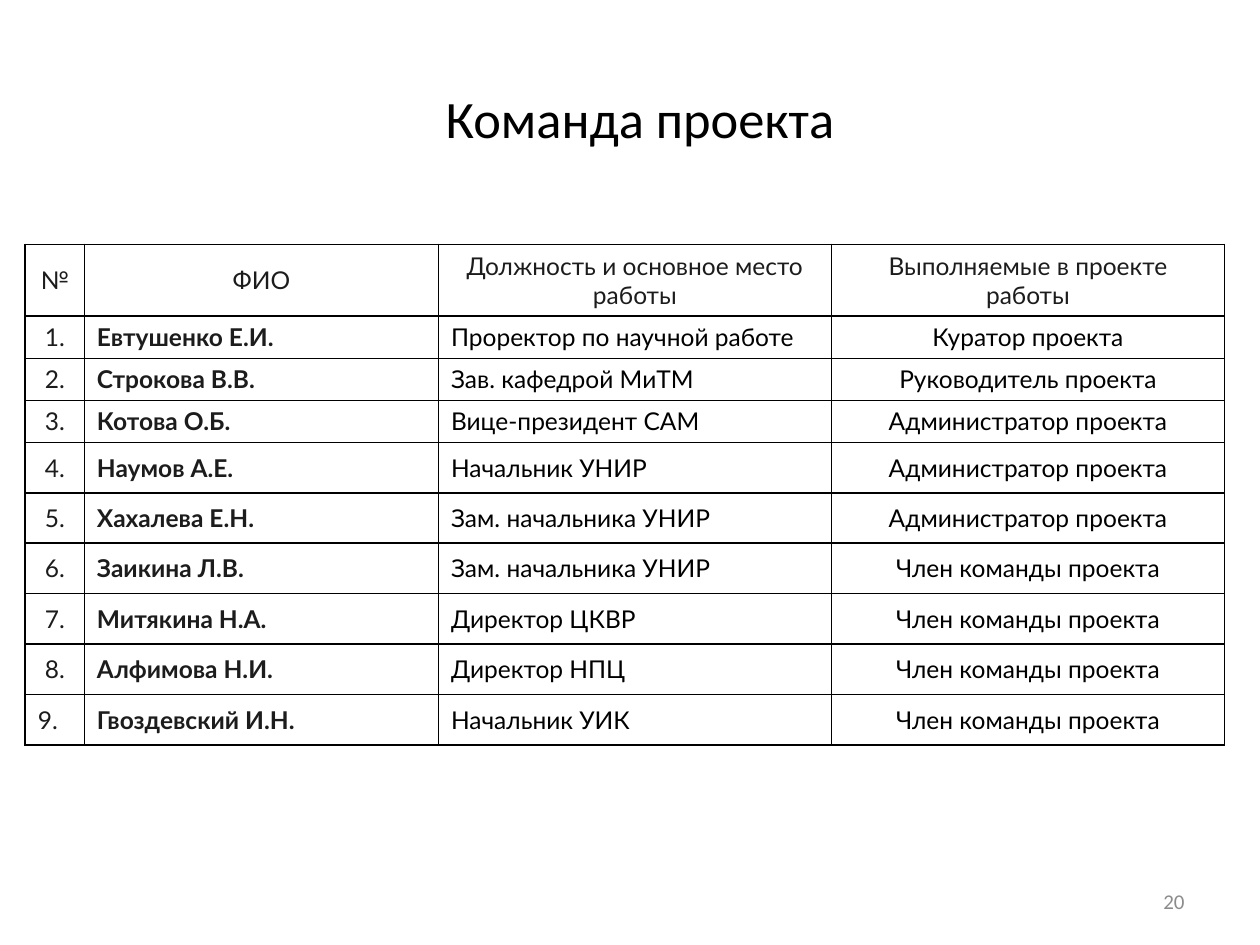
import pptx
import pptx.dml.color
import pptx.enum.text
import pptx.oxml
import pptx.oxml.ns
import pptx.util
from pptx.util import Inches

BLACK = pptx.dml.color.RGBColor(0x00, 0x00, 0x00)
CHARCOAL = pptx.dml.color.RGBColor(0x1C, 0x1C, 0x1C)
GREY = pptx.dml.color.RGBColor(0x8C, 0x8C, 0x8C)

LEFT = pptx.enum.text.PP_ALIGN.LEFT
CENTER = pptx.enum.text.PP_ALIGN.CENTER
RIGHT = pptx.enum.text.PP_ALIGN.RIGHT
MIDDLE = pptx.enum.text.MSO_ANCHOR.MIDDLE

COLUMN_WIDTHS = [0.47, 2.81, 3.12, 3.12]
ROW_HEIGHTS = [0.57] + [0.33] * 3 + [0.4] * 6
HEADERS = ["№", "ФИО", "Должность и основное место работы", "Выполняемые в проекте работы"]
TEAM = [
    ("Евтушенко Е.И.", "Проректор по научной работе", "Куратор проекта"),
    ("Строкова В.В.", "Зав. кафедрой МиТМ", "Руководитель проекта"),
    ("Котова О.Б.", "Вице-президент CAM", "Администратор проекта"),
    ("Наумов А.Е.", "Начальник УНИР", "Администратор проекта"),
    ("Хахалева Е.Н.", "Зам. начальника УНИР", "Администратор проекта"),
    ("Заикина Л.В.", "Зам. начальника УНИР", "Член команды проекта"),
    ("Митякина Н.А.", "Директор ЦКВР", "Член команды проекта"),
    ("Алфимова Н.И.", "Директор НПЦ", "Член команды проекта"),
    ("Гвоздевский И.Н.", "Начальник УИК", "Член команды проекта"),
]


def write_text(frame, text, size=14, font="Lato", color=BLACK, bold=False, align=LEFT):
    para = frame.paragraphs[0]
    para.alignment = align
    span = para.add_run()
    span.text = text
    span.font.size = pptx.util.Pt(size)
    span.font.name = font
    span.font.bold = bold
    span.font.color.rgb = color


def add_title(slide, text):
    title = slide.shapes.title
    title.left, title.top = Inches(0.33), Inches(0.47)
    title.width, title.height = Inches(9.5), Inches(0.92)
    title.text_frame.vertical_anchor = MIDDLE
    write_text(title.text_frame, text, size=30, font="Calibri", align=CENTER)


def add_page_number(slide, text):
    box = slide.shapes.add_textbox(Inches(7.17), Inches(6.95), Inches(2.33), Inches(0.4))
    box.text_frame.word_wrap = True
    box.text_frame.vertical_anchor = MIDDLE
    write_text(box.text_frame, text, size=12, font="Calibri", color=GREY, align=RIGHT)


def set_borders(cell):
    """Draw a thin black line on all four sides; the lines must precede the fill."""
    properties = cell._tc.get_or_add_tcPr()
    for index, side in enumerate(("lnL", "lnR", "lnT", "lnB")):
        line = pptx.oxml.parse_xml(
            f'<a:{side} {pptx.oxml.ns.nsdecls("a")} w="12700"><a:solidFill>'
            f'<a:srgbClr val="{BLACK}"/></a:solidFill></a:{side}>'
        )
        properties.insert(index, line)


def fill_cell(cell, text, **text_format):
    cell.fill.background()
    set_borders(cell)
    cell.vertical_anchor = MIDDLE
    cell.margin_left = cell.margin_right = Inches(0.1)
    cell.margin_top = cell.margin_bottom = Inches(0.05)
    write_text(cell.text_frame, text, **text_format)


def add_team_table(slide):
    frame = slide.shapes.add_table(
        len(ROW_HEIGHTS), len(COLUMN_WIDTHS), Inches(0.2), Inches(1.94),
        Inches(sum(COLUMN_WIDTHS)), Inches(sum(ROW_HEIGHTS)),
    )
    table = frame.table
    table.first_row = table.horz_banding = False
    for column, width in zip(table.columns, COLUMN_WIDTHS):
        column.width = Inches(width)
    for row, height in zip(table.rows, ROW_HEIGHTS):
        row.height = Inches(height)

    for column, header in enumerate(HEADERS):
        fill_cell(table.cell(0, column), header, color=CHARCOAL, align=CENTER)
    for number, (name, position, role) in enumerate(TEAM, start=1):
        number_align = LEFT if number == len(TEAM) else CENTER
        fill_cell(table.cell(number, 0), f"{number}.", color=CHARCOAL, align=number_align)
        fill_cell(table.cell(number, 1), name, color=CHARCOAL, bold=True)
        fill_cell(table.cell(number, 2), position)
        fill_cell(table.cell(number, 3), role, align=CENTER)


def main():
    deck = pptx.Presentation()
    deck.slide_width, deck.slide_height = Inches(10), Inches(7.5)
    slide = deck.slides.add_slide(deck.slide_layouts[5])
    add_page_number(slide, "20")
    add_title(slide, "Команда проекта")
    add_team_table(slide)
    deck.save("out.pptx")


if __name__ == "__main__":
    main()
